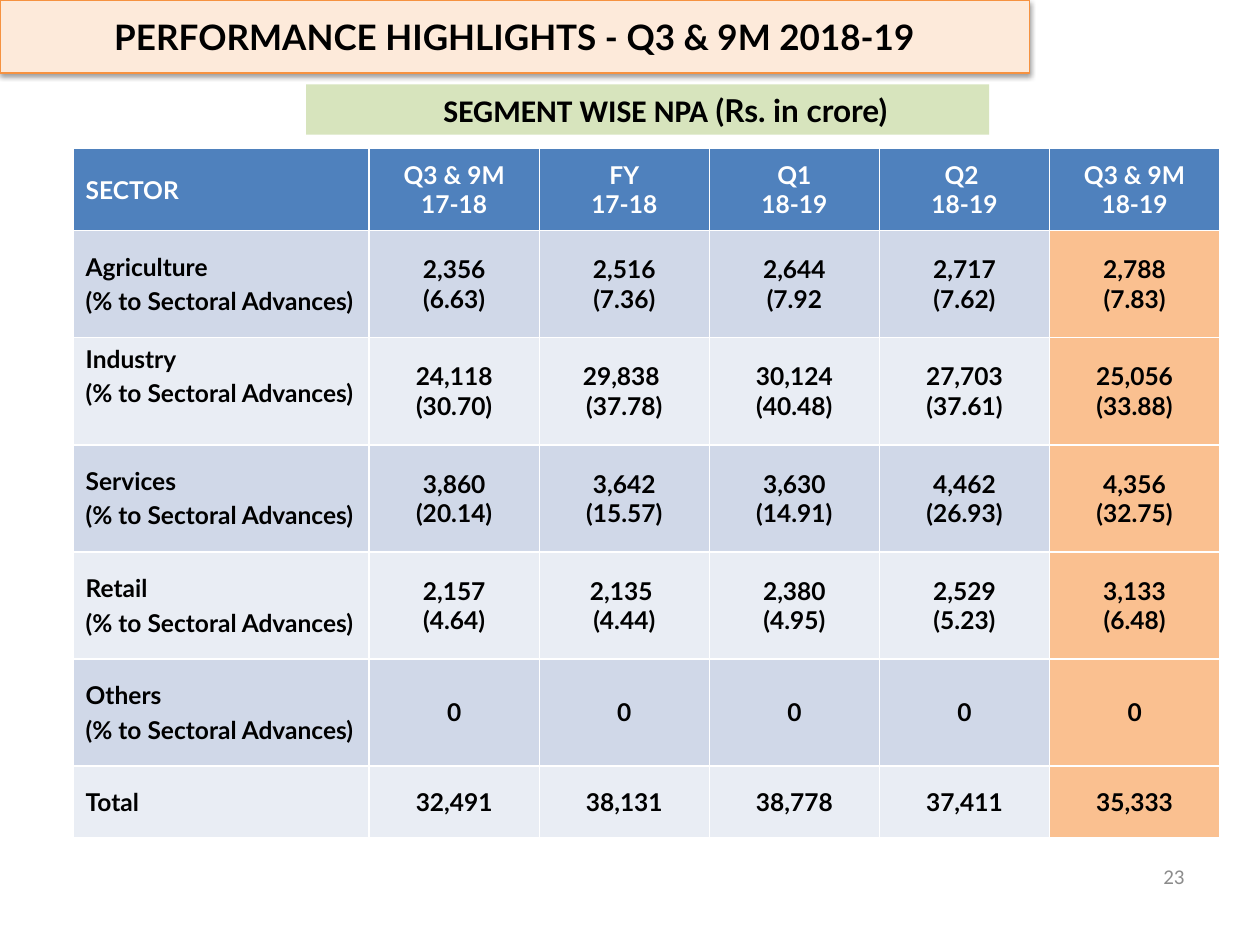
from dataclasses import dataclass

from lxml import etree
from pptx import Presentation
from pptx import util as u
from pptx.dml import color
from pptx.enum import shapes, text
from pptx.oxml import ns


@dataclass(frozen=True)
class Theme:
    ink: str = "000000"
    white: str = "FFFFFF"
    page_ink: str = "8C8C8C"
    banner: str = "FDEADA"
    banner_line: str = "F69240"
    unit_band: str = "D7E4BD"
    header: str = "4F81BD"
    bands: tuple = ("D0D8E8", "E9EDF4")
    latest: str = "FAC090"
    display: str = "Lato"
    body: str = "Calibri"
    title_size: int = 20
    subtitle_size: int = 18
    table_size: int = 14
    page_size: int = 12


THEME = Theme()
SHARE = "(% to Sectoral Advances)"
PERIODS = ["Q3 & 9M\n17-18", "FY\n17-18", "Q1\n18-19", "Q2 \n18-19", "Q3 & 9M\n18-19"]
SECTORS = {
    "Agriculture": ["2,356\n(6.63)", "2,516\n(7.36)", "2,644\n(7.92", "2,717\n(7.62)", "2,788\n(7.83)"],
    "Industry": ["24,118\n(30.70)", "29,838 \n(37.78)", "30,124\n(40.48)", "27,703\n(37.61)", "25,056\n(33.88)"],
    "Services": ["3,860\n(20.14)", "3,642\n(15.57)", "3,630\n(14.91)", "4,462\n(26.93)", "4,356\n(32.75)"],
    "Retail": ["2,157\n(4.64)", "2,135 \n(4.44)", "2,380\n(4.95)", "2,529\n(5.23)", "3,133\n(6.48)"],
    "Others": ["0"] * 5,
}
TOTALS = ["32,491", "38,131", "38,778", "37,411", "35,333"]


def apply_format(target, values):
    for attribute, value in values.items():
        setattr(target, attribute, value)


def paint(fill, rgb):
    fill.solid()
    fill.fore_color.rgb = color.RGBColor.from_string(rgb)


def write_run(paragraph, wording, rgb, **font_format):
    run = paragraph.add_run()
    run.text = wording
    apply_format(run.font, font_format)
    run.font.color.rgb = color.RGBColor.from_string(rgb)


def add_band(slide, box, rgb, frame_format):
    band = slide.shapes.add_shape(shapes.MSO_SHAPE.RECTANGLE, *map(u.Inches, box))
    band.shadow.inherit = False
    paint(band.fill, rgb)
    band.line.fill.background()
    apply_format(band.text_frame, frame_format)
    band.text_frame.paragraphs[0].alignment = text.PP_ALIGN.CENTER
    return band


def add_drop_shadow(band):
    effects = band._element.spPr.find(ns.qn("a:effectLst"))
    shadow = etree.SubElement(
        effects, ns.qn("a:outerShdw"), blurRad=str(u.Pt(3.1)), dist=str(u.Pt(1.6)),
        dir="5400000", algn="ctr", rotWithShape="0")
    tint = etree.SubElement(shadow, ns.qn("a:srgbClr"), val=THEME.ink)
    etree.SubElement(tint, ns.qn("a:alpha"), val="38000")


def add_title(slide):
    banner = add_band(slide, (0, 0, 8.17, 0.58), THEME.banner,
                      {"word_wrap": True, "vertical_anchor": text.MSO_ANCHOR.MIDDLE})
    banner.line.color.rgb = color.RGBColor.from_string(THEME.banner_line)
    banner.line.width = u.Pt(0.75)
    add_drop_shadow(banner)
    write_run(banner.text_frame.paragraphs[0], "PERFORMANCE HIGHLIGHTS - Q3 & 9M 2018-19",
              THEME.ink, size=u.Pt(THEME.title_size), name=THEME.display, bold=True)


def add_subtitle(slide):
    unit_band = add_band(slide, (2.43, 0.67, 5.42, 0.4), THEME.unit_band,
                         {"word_wrap": True, "vertical_anchor": text.MSO_ANCHOR.TOP,
                          "auto_size": text.MSO_AUTO_SIZE.SHAPE_TO_FIT_TEXT,
                          "margin_left": u.Inches(0.38)})
    for wording, font in (("SEGMENT WISE NPA ", THEME.body), ("(Rs. in crore)", THEME.display)):
        write_run(unit_band.text_frame.paragraphs[0], wording, THEME.ink,
                  size=u.Pt(THEME.subtitle_size), name=font, bold=True)


def add_page_number(slide):
    page = slide.shapes.add_textbox(*map(u.Inches, (7.17, 6.75, 2.33, 0.4))).text_frame
    apply_format(page, {"word_wrap": True, "vertical_anchor": text.MSO_ANCHOR.MIDDLE})
    page.paragraphs[0].alignment = text.PP_ALIGN.RIGHT
    write_run(page.paragraphs[0], "23", THEME.page_ink,
              size=u.Pt(THEME.page_size), name=THEME.body)


def add_borders(cell):
    properties = cell._tc.get_or_add_tcPr()
    for side in ("lnL", "lnR", "lnT", "lnB"):
        border = etree.SubElement(properties, ns.qn(f"a:{side}"), w=str(u.Pt(1)))
        solid = etree.SubElement(border, ns.qn("a:solidFill"))
        etree.SubElement(solid, ns.qn("a:srgbClr"), val=THEME.white)


def fill_cell(cell, wording, fill, ink, paragraph_format, anchor):
    add_borders(cell)
    paint(cell.fill, fill)
    cell.vertical_anchor = anchor
    for index, line in enumerate(wording.split("\n")):
        paragraph = cell.text_frame.add_paragraph() if index else cell.text_frame.paragraphs[0]
        apply_format(paragraph, paragraph_format)
        write_run(paragraph, line, ink, size=u.Pt(THEME.table_size),
                  name=THEME.display, bold=True)


def add_npa_table(slide):
    rows = [["SECTOR", *PERIODS]]
    rows += [[f"{sector}\n{SHARE}", *figures] for sector, figures in SECTORS.items()]
    rows.append(["Total", *TOTALS])
    widths = [2.35] + [1.35] * len(PERIODS)
    heights = [0.65] + [0.85] * len(SECTORS) + [0.57]
    box = (0.58, 1.18, sum(widths), sum(heights))
    table = slide.shapes.add_table(len(rows), len(widths), *map(u.Inches, box)).table
    for column, width in zip(table.columns, widths):
        column.width = u.Inches(width)
    for row, height in zip(table.rows, heights):
        row.height = u.Inches(height)

    label_format = {"alignment": text.PP_ALIGN.LEFT, "space_before": u.Pt(2.8)}
    figure_format = {"alignment": text.PP_ALIGN.CENTER}
    for r, row in enumerate(rows):
        for c, wording in enumerate(row):
            latest = c == len(PERIODS)
            body_fill = THEME.latest if latest else THEME.bands[(r - 1) % 2]
            top_label = c == 0 and wording.startswith("Industry")
            fill_cell(table.cell(r, c), wording,
                      body_fill if r else THEME.header,
                      THEME.ink if r else THEME.white,
                      figure_format if c else label_format,
                      text.MSO_ANCHOR.TOP if top_label else text.MSO_ANCHOR.MIDDLE)


def main():
    deck = Presentation()
    apply_format(deck, {"slide_width": u.Inches(10), "slide_height": u.Inches(7.5)})
    slide = deck.slides.add_slide(deck.slide_layouts[6])
    add_subtitle(slide)
    add_page_number(slide)
    add_title(slide)
    add_npa_table(slide)
    deck.save("out.pptx")


if __name__ == "__main__":
    main()
